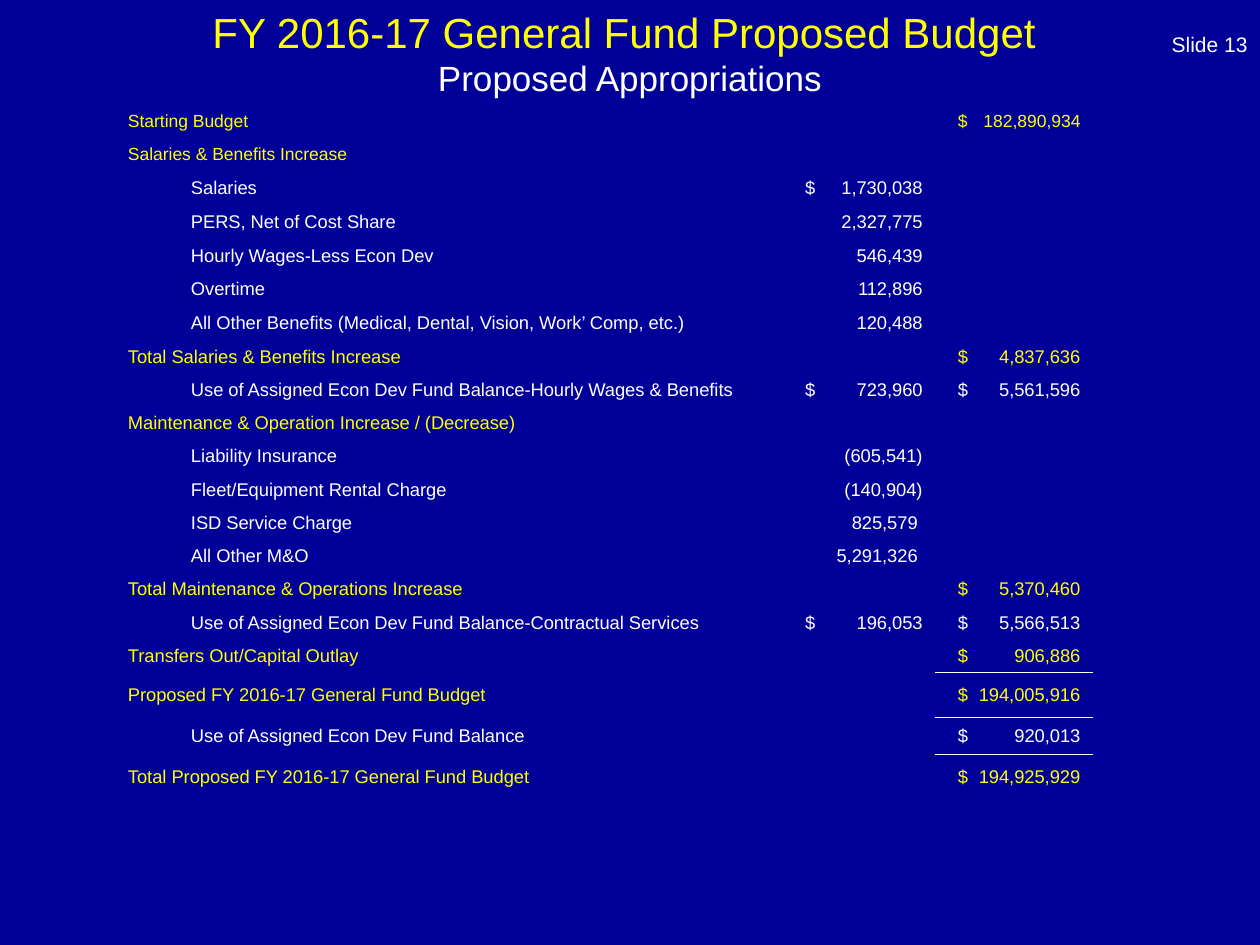
from dataclasses import dataclass

from lxml import etree
from pptx import Presentation
from pptx.dml.color import RGBColor
from pptx.enum.text import MSO_ANCHOR, MSO_AUTO_SIZE, PP_ALIGN
from pptx.oxml.ns import qn
from pptx.util import Cm, Pt

NAVY = RGBColor(0x00, 0x00, 0x99)
YELLOW = RGBColor(0xFF, 0xFF, 0x00)
WHITE = RGBColor(0xFF, 0xFF, 0xFF)
FONT = "Arial"
MIDDLE, BOTTOM = MSO_ANCHOR.MIDDLE, MSO_ANCHOR.BOTTOM
LEFT, CENTER, RIGHT = PP_ALIGN.LEFT, PP_ALIGN.CENTER, PP_ALIGN.RIGHT
NO_GRID_STYLE = "{2D5ABB26-0587-4C30-8999-92F81FD0307C}"

COL_WIDTHS = (13.34, 3.18, 3.18)
SIDE, INDENT = 0.25, 1.27          # cell side margin, detail indent
DOLLAR_LEFT = {1: 0.56, 2: 0.46}   # where the $ sign starts in each column
PAREN_GAP = 0.1                    # keeps digits clear of the closing bracket


@dataclass
class Line:
    label: str
    amount: str = ""
    total: str = ""
    detail: bool = False
    height: float = 0.67
    size: float = 10.5
    rule: bool = False       # line under the total
    shift: float = 0         # extra right margin of the amount


# A leading $ is set apart from its number with a tab
LINES = [
    Line("Starting Budget", total="$182,890,934", size=10),
    Line("Salaries & Benefits Increase", size=10),
    Line("Salaries", "$1,730,038", detail=True),
    Line("PERS, Net of Cost Share", "2,327,775", detail=True, height=0.7),
    Line("Hourly Wages-Less Econ Dev", "546,439", detail=True),
    Line("Overtime", "112,896", detail=True),
    Line("All Other Benefits (Medical, Dental, Vision, Work’ Comp, etc.)",
         "120,488", detail=True, height=0.7),
    Line("Total Salaries & Benefits Increase", total="$4,837,636"),
    Line("Use of Assigned Econ Dev Fund Balance-Hourly Wages & Benefits",
         "$723,960", "$5,561,596", detail=True),
    Line("Maintenance & Operation Increase / (Decrease)"),
    Line("Liability Insurance", "(605,541)", detail=True),
    Line("Fleet/Equipment Rental Charge", "(140,904)", detail=True),
    Line("ISD Service Charge", "825,579", detail=True, shift=PAREN_GAP),
    Line("All Other M&O", "5,291,326", detail=True, shift=PAREN_GAP),
    Line("Total Maintenance & Operations Increase", total="$5,370,460"),
    Line("Use of Assigned Econ Dev Fund Balance-Contractual Services",
         "$196,053", "$5,566,513", detail=True),
    Line("Transfers Out/Capital Outlay", total="$906,886", rule=True),
    Line("Proposed FY 2016-17 General Fund Budget", total="$194,005,916", height=0.91),
    Line("Use of Assigned Econ Dev Fund Balance", total="$920,013",
         detail=True, height=0.74, rule=True),
    Line("Total Proposed FY 2016-17 General Fund Budget",
         total="$194,925,929", height=0.91),
]


def add_run(p, text: str, size: float, color: RGBColor) -> None:
    r = p.add_run()
    r.text = text
    r.font.name = FONT
    r.font.size = Pt(size)
    r.font.color.rgb = color


def add_border(cell, side: str) -> None:
    ln = etree.Element(qn(f"a:{side}"), w=str(Pt(1)))
    fill = etree.SubElement(ln, qn("a:solidFill"))
    etree.SubElement(fill, qn("a:srgbClr"), val=str(WHITE))
    cell._tc.get_or_add_tcPr().insert(0, ln)


def fill_cell(cell, col: int, text: str, line: Line) -> None:
    cell.fill.background()
    cell.vertical_anchor = MIDDLE
    cell.margin_top = cell.margin_bottom = Cm(0.1)
    cell.margin_left = cell.margin_right = Cm(SIDE)
    p = cell.text_frame.paragraphs[0]
    if not text:
        # Small end mark so that an empty cell does not stretch its row
        etree.SubElement(p._p, qn("a:endParaRPr"), sz=str(int(line.size * 100)))
        return
    if col == 0:
        p.alignment = LEFT
        if line.detail:
            cell.margin_left = Cm(SIDE + INDENT)
    elif text.startswith("$"):
        left = DOLLAR_LEFT[col]
        cell.margin_left, cell.margin_right = Cm(left), Cm(0.1)
        tabs = etree.SubElement(p._p.get_or_add_pPr(), qn("a:tabLst"))
        stop = Cm(COL_WIDTHS[col] - SIDE - left)
        etree.SubElement(tabs, qn("a:tab"), pos=str(stop), algn="r")
        p.alignment = LEFT
        text = text.replace("$", "$\t")
    else:
        p.alignment = RIGHT
        cell.margin_right = Cm(SIDE + line.shift)
    add_run(p, text, line.size, WHITE if line.detail else YELLOW)


def add_budget_table(s) -> None:
    height = sum(line.height for line in LINES)
    frame = s.shapes.add_table(len(LINES), len(COL_WIDTHS), Cm(2.33), Cm(2.11),
                               Cm(sum(COL_WIDTHS)), Cm(height))
    table = frame.table
    table.first_row = table.horz_banding = False
    table._tbl.tblPr.find(qn("a:tableStyleId")).text = NO_GRID_STYLE
    for column, width in zip(table.columns, COL_WIDTHS):
        column.width = Cm(width)
    for i, line in enumerate(LINES):
        table.rows[i].height = Cm(line.height)
        for col, text in enumerate((line.label, line.amount, line.total)):
            fill_cell(table.cell(i, col), col, text, line)
        if line.rule:
            add_border(table.cell(i, 2), "lnB")
            add_border(table.cell(i + 1, 2), "lnT")
    last = len(LINES) - 1
    table.cell(last, 0).merge(table.cell(last, 1))


def add_title(s) -> None:
    title = s.shapes.title
    title.left, title.top, title.width, title.height = Cm(0.85), Cm(0.21), Cm(23.7), Cm(1.69)
    tf = title.text_frame
    tf.auto_size = MSO_AUTO_SIZE.NONE
    tf.vertical_anchor = MIDDLE
    heading, subheading = tf.paragraphs[0], tf.add_paragraph()
    add_run(heading, "FY 2016-17 General Fund Proposed Budget ", 24, YELLOW)
    add_run(subheading, "Proposed Appropriations", 20, WHITE)
    for p in (heading, subheading):
        p.alignment = CENTER
        p.space_before = Pt(0)


def add_slide_label(s) -> None:
    tf = s.shapes.add_textbox(Cm(19.48), Cm(0), Cm(5.92), Cm(1.27)).text_frame
    tf.word_wrap = True
    tf.vertical_anchor = BOTTOM
    p = tf.paragraphs[0]
    p.alignment = RIGHT
    add_run(p, "Slide 13", 12, WHITE)


def main() -> None:
    prs = Presentation()
    prs.slide_width, prs.slide_height = Cm(25.4), Cm(19.05)
    s = prs.slides.add_slide(prs.slide_layouts[5])
    s.background.fill.solid()
    s.background.fill.fore_color.rgb = NAVY
    add_slide_label(s)
    add_budget_table(s)
    add_title(s)
    prs.save("out.pptx")


if __name__ == "__main__":
    main()
